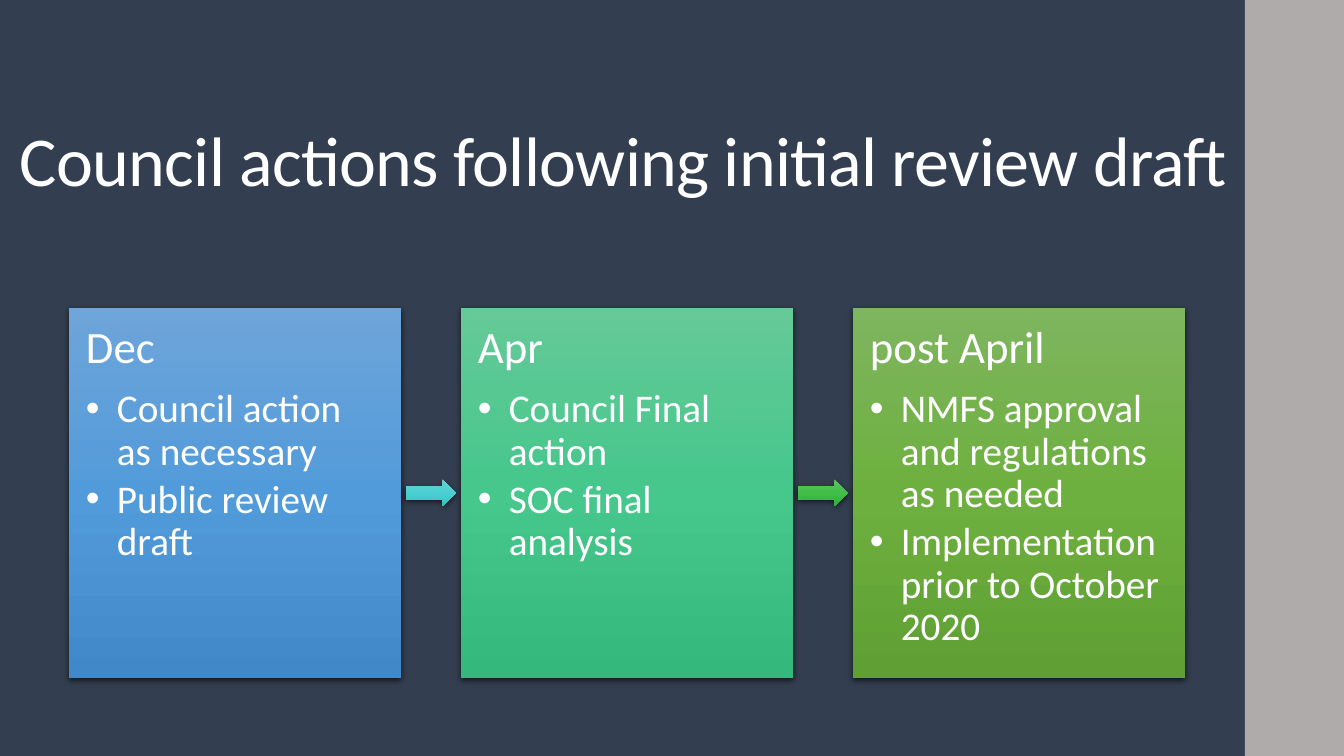
from lxml import etree
from pptx import Presentation
from pptx import util as u
from pptx.dml.color import RGBColor
from pptx.enum import shapes, text
from pptx.oxml.ns import qn

TITLE = "Council actions following initial review draft"
STEPS = [
    ("Dec", ["Council action as necessary", "Public review draft"],
     ("6EA5DA", "529BDA", "4188C8")),
    ("Apr", ["Council Final action", "SOC final analysis"],
     ("65C998", "46C78C", "35B87B")),
    ("post April", ["NMFS approval and regulations as needed",
                    "Implementation prior to October 2020"],
     ("7EB55F", "6EB03F", "5F9F34")),
]
ARROWS = [("69D0D1", "4AD0D2", "3ABFC0"), ("60C165", "3FBF47", "32AE3A")]
NAVY, GREY, WHITE = "333F50", "AFABAB", "FFFFFF"
FONT = "Calibri"

WIDTH, HEIGHT = 1344, 756
CARD_LEFT, CARD_TOP, CARD_W, CARD_H, CARD_STEP = 69, 308, 332, 370, 392
ARROW_W, ARROW_H = 50, 27
CARD_INSET, BULLET_INDENT = 17, 31


def px(n):
    return round(n * u.Inches(1) / 100.8)


def rgb(value):
    return RGBColor.from_string(value)


def add_element(parent, tag, **attrs):
    return etree.SubElement(parent, qn(tag), {k: str(v) for k, v in attrs.items()})


def add_block(kind, left, top, width, height):
    """Add a preset shape with neither outline nor shadow."""
    sp = slide.shapes.add_shape(kind, px(left), px(top), px(width), px(height))
    sp.line.fill.background()
    sp.shadow.inherit = False
    return sp


def add_shaded(kind, left, top, width, height, colors):
    """Add a shape with a vertical three-colour gradient and a drop shadow."""
    sp = add_block(kind, left, top, width, height)
    sp.fill.gradient()
    sp.fill.gradient_angle = 270
    props = sp._element.spPr
    stops = props.find(".//" + qn("a:gsLst"))
    for stop in list(stops):
        stops.remove(stop)
    for pos, color in zip((0, 50000, 100000), colors):
        add_element(add_element(stops, "a:gs", pos=pos), "a:srgbClr", val=color)
    shadow = add_element(props.find(qn("a:effectLst")), "a:outerShdw",
                         blurRad=u.Pt(4.5), dist=u.Pt(1.5), dir=5400000,
                         algn="ctr", rotWithShape=0)
    add_element(add_element(shadow, "a:srgbClr", val="000000"), "a:alpha", val=63000)
    return sp


def set_frame(tf, anchor, inset_x, inset_y):
    tf.word_wrap = True
    tf.vertical_anchor = anchor
    tf.margin_left = tf.margin_right = px(inset_x)
    tf.margin_top = tf.margin_bottom = px(inset_y)


def write(p, words, size, align=text.PP_ALIGN.LEFT, before=0, bullet=False, spacing=0):
    p.alignment = align
    p.line_spacing = 0.9
    p.space_before = u.Pt(before)
    r = p.add_run()
    r.text = words
    r.font.size, r.font.name = u.Pt(size), FONT
    r.font.color.rgb = rgb(WHITE)
    if spacing:
        r.font._element.set("spc", str(round(spacing * 100)))
    if bullet:
        p.level = 1
        props = p._p.get_or_add_pPr()
        props.set("marL", str(px(BULLET_INDENT)))
        props.set("indent", str(-px(BULLET_INDENT)))
        add_element(add_element(props, "a:buClr"), "a:srgbClr", val=WHITE)
        add_element(props, "a:buFont", typeface="Arial")
        add_element(props, "a:buChar", char="•")


prs = Presentation()
prs.slide_width, prs.slide_height = px(WIDTH), px(HEIGHT)
slide = prs.slides.add_slide(prs.slide_layouts[6])
slide.background.fill.solid()
slide.background.fill.fore_color.rgb = rgb(NAVY)

RECT, ARROW = shapes.MSO_SHAPE.RECTANGLE, shapes.MSO_SHAPE.RIGHT_ARROW
band = add_block(RECT, 1245, 0, WIDTH - 1245, HEIGHT)
band.fill.solid()
band.fill.fore_color.rgb = rgb(GREY)

title = slide.shapes.add_textbox(px(0), px(91), px(1248), px(146))
set_frame(title.text_frame, text.MSO_ANCHOR.MIDDLE, 10, 5)
write(title.text_frame.paragraphs[0], TITLE, 50,
      align=text.PP_ALIGN.CENTER, spacing=-0.5)

for i, (heading, actions, colors) in enumerate(STEPS):
    left = CARD_LEFT + i * CARD_STEP
    card = add_shaded(RECT, left, CARD_TOP, CARD_W, CARD_H, colors)
    tf = card.text_frame
    set_frame(tf, text.MSO_ANCHOR.TOP, CARD_INSET, CARD_INSET)
    write(tf.paragraphs[0], heading, 32)
    for j, action in enumerate(actions):
        write(tf.add_paragraph(), action, 28, before=4.2 if j else 11.2, bullet=True)

for i, colors in enumerate(ARROWS):
    gap_left = CARD_LEFT + i * CARD_STEP + CARD_W
    add_shaded(ARROW, gap_left + (CARD_STEP - CARD_W - ARROW_W) / 2,
               CARD_TOP + (CARD_H - ARROW_H) / 2, ARROW_W, ARROW_H, colors)

prs.save("out.pptx")
